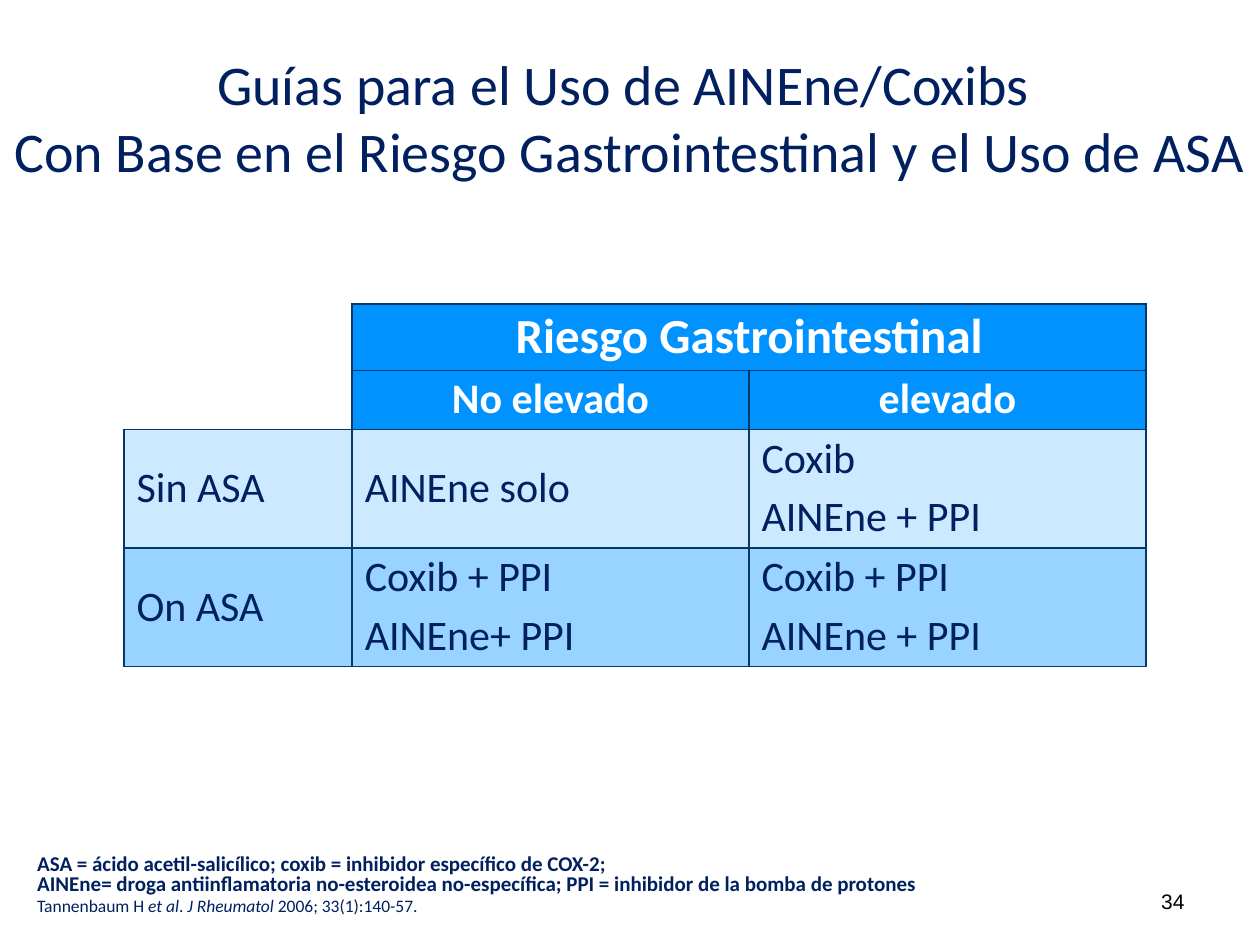
"""Build a slide with a treatment guide by gastrointestinal risk and ASA use."""
import copy
from dataclasses import dataclass

import lxml.etree
import pptx
import pptx.dml.color
import pptx.enum.text
import pptx.oxml.ns
import pptx.util

Cm = pptx.util.Cm
Pt = pptx.util.Pt
Align = pptx.enum.text.PP_ALIGN
Anchor = pptx.enum.text.MSO_ANCHOR
qn = pptx.oxml.ns.qn


@dataclass(frozen=True)
class Theme:
    font: str = "Calibri"
    number_font: str = "Arial"
    navy: str = "002060"
    white: str = "FFFFFF"
    black: str = "000000"
    border: str = "063768"
    header: str = "0092FF"
    light: str = "CCE9FF"
    medium: str = "99D3FF"
    title_size: int = 32
    risk_size: int = 28
    cell_size: int = 24
    note_size: int = 12
    source_size: int = 10


theme = Theme()


def write(para, spans, size, color, name=theme.font, bold=False, **layout):
    for key, value in layout.items():
        setattr(para, key, value)
    for text, italic in spans:
        for number, line in enumerate(text.split("\n")):
            if number:
                para.add_line_break()
            span = para.add_run()
            span.text = line
            values = {"name": name, "size": Pt(size), "bold": bold, "italic": italic}
            for key, value in values.items():
                setattr(span.font, key, value)
            span.font.color.rgb = pptx.dml.color.RGBColor.from_string(color)
    for line_break in para._p.findall(qn("a:br")):
        line_break.insert(0, copy.deepcopy(para.runs[0].font._element))


def draw_borders(cell, sides):
    properties = cell._tc.get_or_add_tcPr()
    for position, side in enumerate(sides):
        line = lxml.etree.Element(qn(f"a:ln{side}"), w=str(Pt(1)))
        fill = lxml.etree.SubElement(line, qn("a:solidFill"))
        lxml.etree.SubElement(fill, qn("a:srgbClr"), val=theme.border)
        properties.insert(position, line)


deck = pptx.Presentation()
deck.slide_width, deck.slide_height = Cm(25.4), Cm(19.05)
page = deck.slides.add_slide(deck.slide_layouts[5])

title = page.shapes.title
place = {"left": Cm(0), "top": Cm(0.76), "width": Cm(25.4), "height": Cm(3.18)}
for key, value in place.items():
    setattr(title, key, value)
frame = {"margin_left": 0, "margin_right": 0, "word_wrap": True,
         "vertical_anchor": Anchor.MIDDLE, "auto_size": pptx.enum.text.MSO_AUTO_SIZE.NONE}
for key, value in frame.items():
    setattr(title.text_frame, key, value)
heading = ("Guías para el Uso de AINEne/Coxibs \n"
           "Con Base en el Riesgo Gastrointestinal y el Uso de ASA")
write(title.text_frame.paragraphs[0], [(heading, False)], theme.title_size,
      theme.navy, alignment=Align.CENTER)

widths = [4.6, 8, 8]
heights = [1.32, 1.17, 2.39, 2.39]
rows = [
    ["", "Riesgo Gastrointestinal", ""],
    ["", "No elevado", "elevado"],
    ["Sin ASA", "AINEne solo", "Coxib|AINEne + PPI"],
    ["On ASA", "Coxib + PPI|AINEne+ PPI", "Coxib + PPI|AINEne + PPI"],
]
fills = [theme.header, theme.header, theme.light, theme.medium]
sizes = [theme.risk_size] + [theme.cell_size] * 3
corner_borders = ["R", "RB"]
table = page.shapes.add_table(len(rows), len(widths), Cm(2.5), Cm(6.13),
                              Cm(sum(widths)), Cm(sum(heights))).table
table.first_row = table.horz_banding = False
for column, width in zip(table.columns, widths):
    column.width = Cm(width)
for row, height in zip(table.rows, heights):
    row.height = Cm(height)
table.cell(0, 1).merge(table.cell(0, 2))

for r, texts in enumerate(rows):
    is_header = r < 2
    for c, text in enumerate(texts):
        cell = table.cell(r, c)
        if is_header and c == 0:
            cell.fill.background()
            draw_borders(cell, corner_borders[r])
            continue
        cell.fill.solid()
        cell.fill.fore_color.rgb = pptx.dml.color.RGBColor.from_string(fills[r])
        draw_borders(cell, "LRTB")
        if not text:
            continue
        cell.vertical_anchor = Anchor.MIDDLE
        for number, line in enumerate(text.split("|")):
            frame = cell.text_frame
            para = frame.add_paragraph() if number else frame.paragraphs[0]
            write(para, [(line, False)], sizes[r],
                  theme.white if is_header else theme.navy, bold=is_header,
                  alignment=Align.CENTER if is_header else Align.LEFT,
                  line_spacing=0.9, space_before=Pt(7 if number else 0))

notes = page.shapes.add_textbox(Cm(0.5), Cm(17.12), Cm(19.6), Cm(1.5)).text_frame
notes.word_wrap = True
definitions = ("ASA = ácido acetil-salicílico; coxib = inhibidor específico de COX-2; \n"
               "AINEne= droga antiinflamatoria no-esteroidea no-específica; "
               "PPI = inhibidor de la bomba de protones")
write(notes.paragraphs[0], [(definitions, False)], theme.note_size, theme.navy,
      bold=True, line_spacing=0.8)
citation = [("Tannenbaum H ", False), ("et al", True), (". ", False),
            ("J Rheumatol ", True), ("2006; 33(1):140-57.", False)]
write(notes.add_paragraph(), citation, theme.source_size, theme.navy,
      line_spacing=0.8, space_before=Pt(2))

number_box = page.shapes.add_textbox(Cm(18.2), Cm(17.65), Cm(5.93), Cm(1.02)).text_frame
number_box.word_wrap = True
number_box.vertical_anchor = Anchor.MIDDLE
write(number_box.paragraphs[0], [("34", False)], theme.note_size, theme.black,
      name=theme.number_font, alignment=Align.RIGHT)

deck.save("out.pptx")
